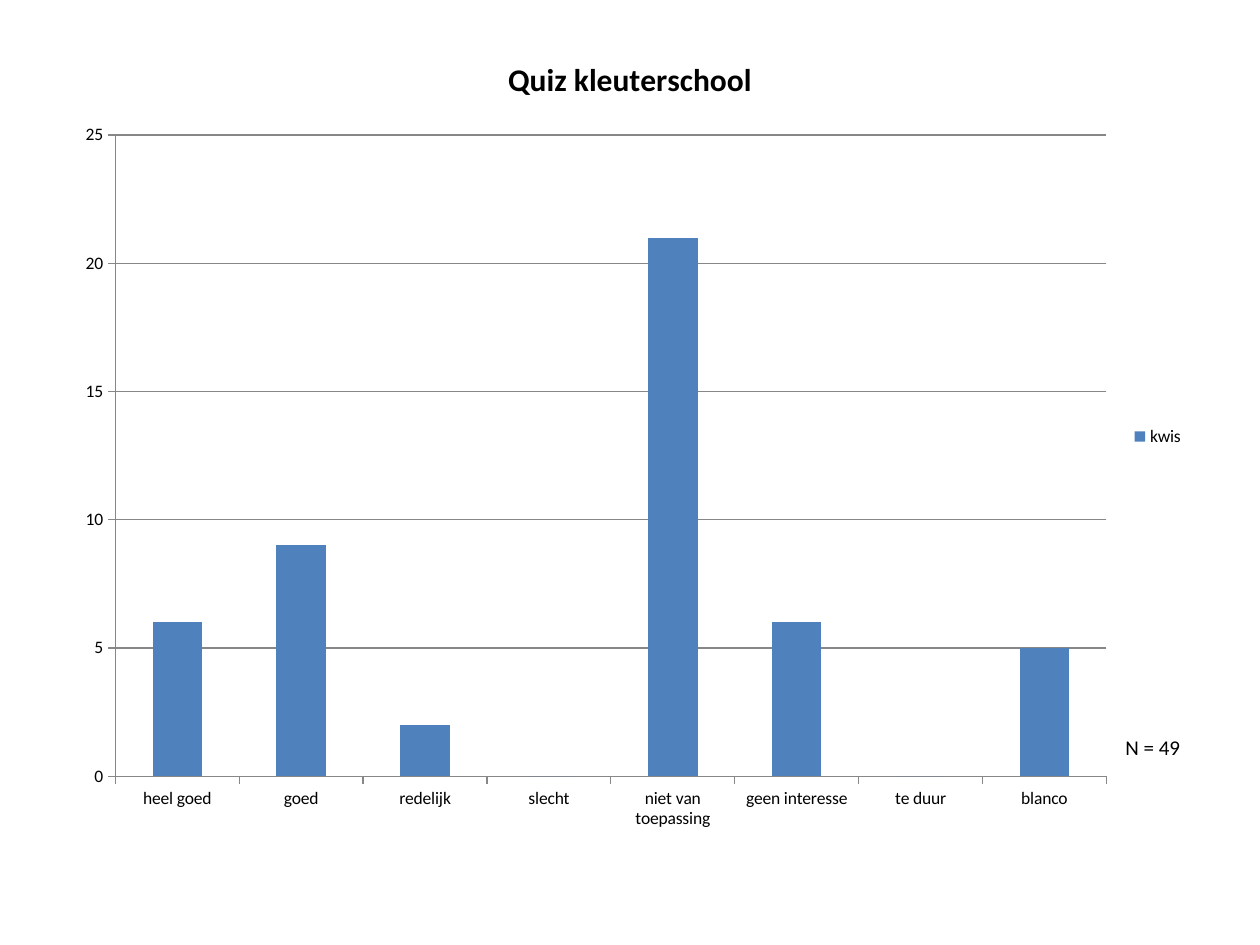
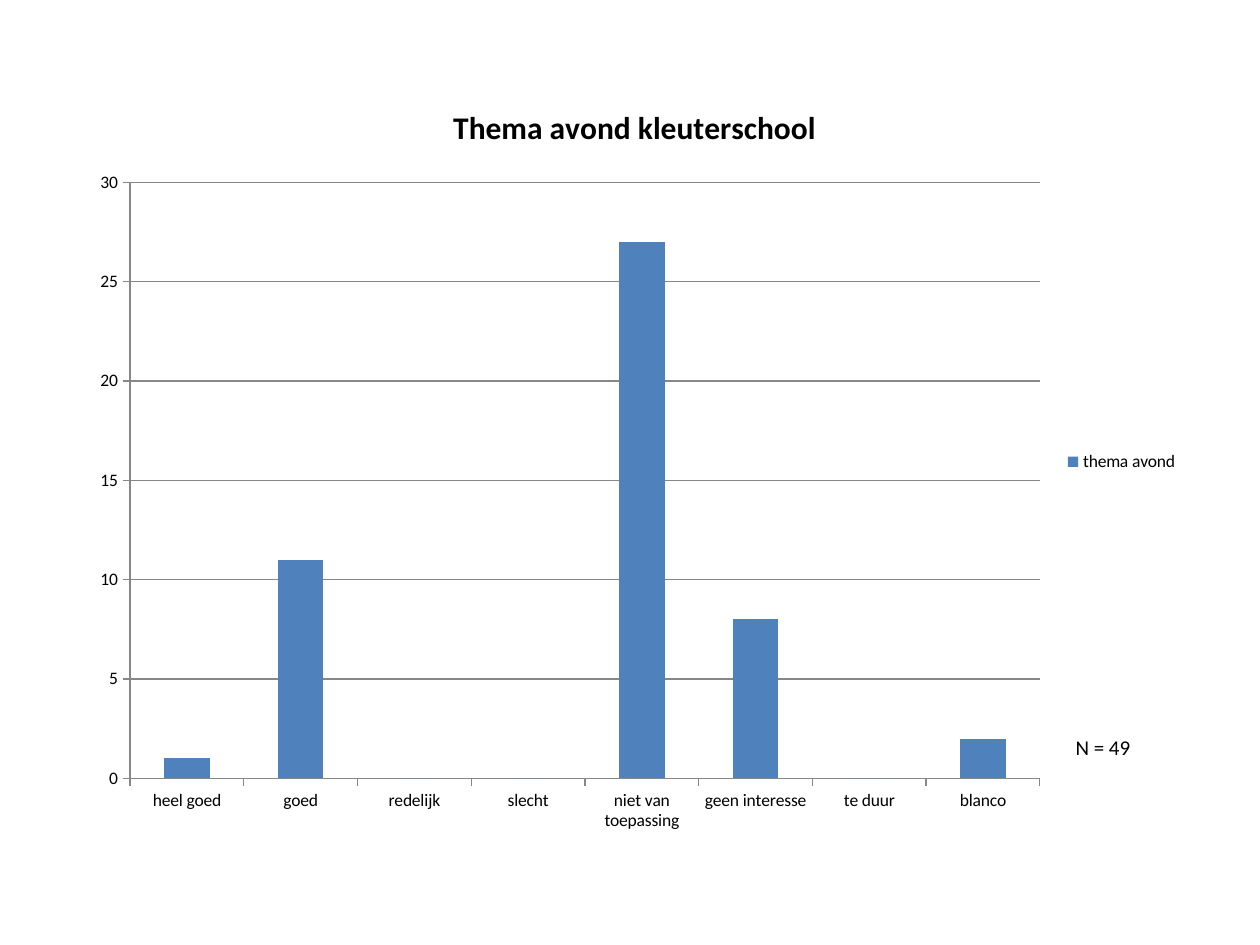
from pptx import Presentation
from pptx.chart.data import CategoryChartData as Data
from pptx.dml.color import RGBColor
from pptx.enum.chart import XL_CHART_TYPE as Kind, XL_LEGEND_POSITION as Side, XL_TICK_MARK as Tick
from pptx.util import Pt

FONT, INK, BLUE, GREY = "Calibri", "000000", "4F81BD", "878787"
CATS = ["heel goed", "goed", "redelijk", "slecht", "niet van toepassing",
        "geen interesse", "te duur", "blanco"]
NOTE = "N = 49"
NOTE_TOP, NOTE_WIDE, NOTE_HIGH = 416, 84, 21.6
SLIDES = [
    dict(title="Quiz kleuterschool", name="kwis", vals=[6, 9, 2, 0, 21, 6, 0, 5],
         top=25, box=(36, 16.5, 648, 466), note=636),
    dict(title="Thema avond kleuterschool", name="thema avond",
         vals=[1, 11, 0, 0, 27, 8, 0, 2],
         top=30, box=(44.64, 44.64, 636, 438.5), note=607.5),
]


def paint(color, code):
    color.rgb = RGBColor.from_string(code)


def style(font, size, bold=False):
    font.name, font.size, font.bold = FONT, Pt(size), bold
    paint(font.color, INK)


def write(frame, text, size=12, bold=False):
    run = frame.paragraphs[0].add_run()
    run.text = text
    style(run.font, size, bold)


def rule(line):
    line.width = Pt(0.75)
    paint(line.color, GREY)


def draw(slide, item):
    data = Data(number_format="General")
    data.categories = CATS
    data.add_series(item["name"], item["vals"])
    chart = slide.shapes.add_chart(
        Kind.COLUMN_CLUSTERED, *map(Pt, item["box"]), data).chart
    style(chart.font, 10)
    chart.has_title = True
    write(chart.chart_title.text_frame, item["title"], size=18, bold=True)
    chart.chart_title.include_in_layout = False
    chart.has_legend = True
    chart.legend.position = Side.RIGHT
    chart.legend.include_in_layout = False

    for axis in (chart.category_axis, chart.value_axis):
        axis.major_tick_mark, axis.minor_tick_mark = Tick.OUTSIDE, Tick.NONE
        rule(axis.format.line)
    scale = chart.value_axis
    scale.minimum_scale, scale.maximum_scale, scale.major_unit = 0, item["top"], 5
    scale.has_major_gridlines = True
    rule(scale.major_gridlines.format.line)

    plot = chart.plots[0]
    plot.gap_width, plot.vary_by_categories = 150, False
    fill = plot.series[0].format.fill
    fill.solid()
    paint(fill.fore_color, BLUE)


def main():
    deck = Presentation()
    deck.slide_width, deck.slide_height = Pt(720), Pt(540)
    for item in SLIDES:
        slide = deck.slides.add_slide(deck.slide_layouts[6])
        draw(slide, item)
        spot = (item["note"], NOTE_TOP, NOTE_WIDE, NOTE_HIGH)
        frame = slide.shapes.add_textbox(*map(Pt, spot)).text_frame
        frame.word_wrap = True
        write(frame, NOTE)
    deck.save("out.pptx")


if __name__ == "__main__":
    main()
